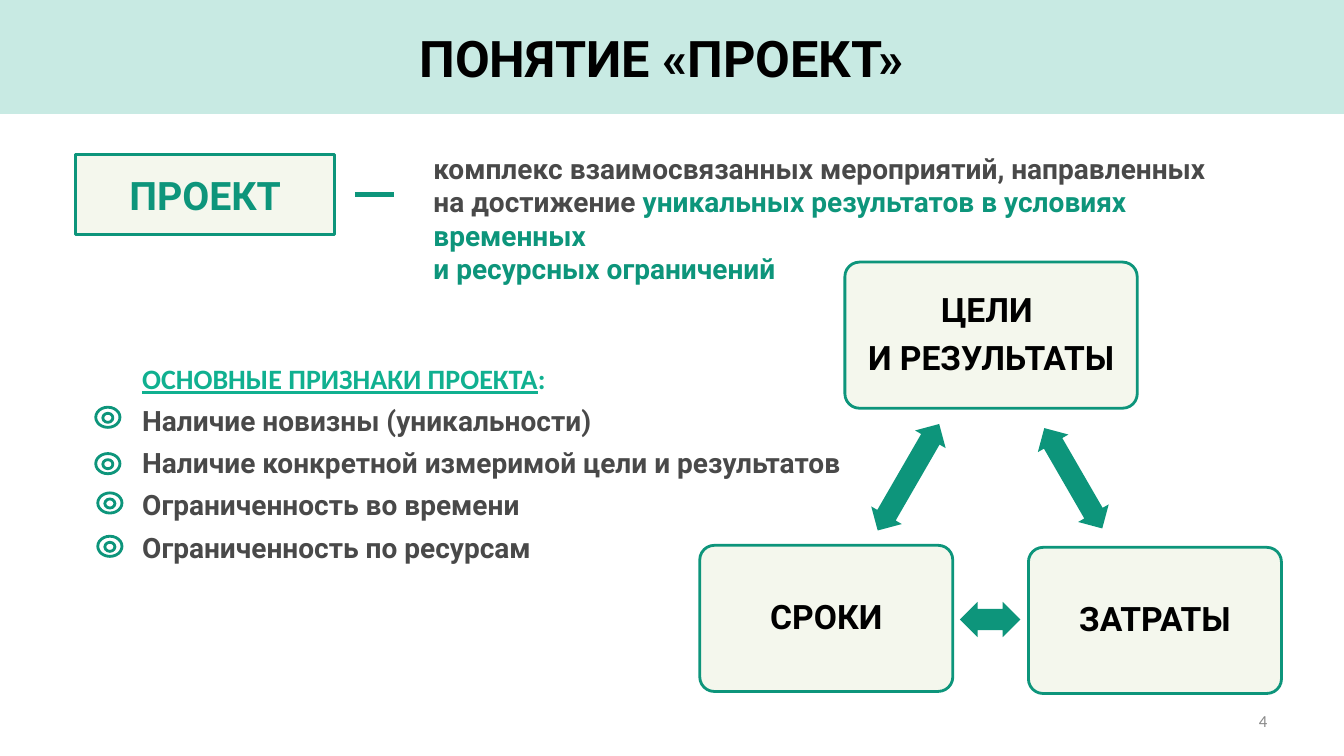
import pptx
import pptx.util
import pptx.dml.color
import pptx.enum.shapes
import pptx.enum.text
import pptx.oxml.ns
import lxml.etree

Inches, Pt = pptx.util.Inches, pptx.util.Pt
SHAPE = pptx.enum.shapes.MSO_SHAPE
ALIGN = pptx.enum.text.PP_ALIGN
ANCHOR = pptx.enum.text.MSO_ANCHOR
qn = pptx.oxml.ns.qn

GREEN, CREAM, GRAY, BLACK = "0D957B", "F4F7ED", "494949", "000000"


def color(code):
    return pptx.dml.color.RGBColor.from_string(code)


def place(shape, box):
    for key, val in zip(("left", "top", "width", "height"), box):
        setattr(shape, key, Inches(val))


def style(font, form):
    """Set font attributes from a dict; 'color' is a hex string."""
    for key, val in form.items():
        if key == "color":
            font.color.rgb = color(val)
        else:
            setattr(font, key, val)


def face(size, code, name="Roboto", bold=True):
    return {"size": Pt(size), "color": code, "name": name, "bold": bold}


def write(para, runs, **layout):
    """Fill a paragraph with (text, format) runs; newlines become breaks."""
    for key, val in layout.items():
        setattr(para, key, val)
    for text, form in runs:
        for num, part in enumerate(text.split("\n")):
            if num:
                para.add_line_break()
            run = para.add_run()
            run.text = part
            style(run.font, form)


def setup(shape, anchor=ANCHOR.TOP):
    frame = shape.text_frame
    frame.word_wrap = True
    frame.auto_size = pptx.enum.text.MSO_AUTO_SIZE.NONE
    frame.vertical_anchor = anchor
    return frame


def label(slide, box, runs, anchor=ANCHOR.TOP, **layout):
    shape = slide.shapes.add_textbox(*map(Inches, box))
    write(setup(shape, anchor).paragraphs[0], runs, **layout)


def draw(slide, kind, box, fill=None, line=None, adjust=(), turn=0):
    shape = slide.shapes.add_shape(kind, *map(Inches, box))
    shape.shadow.inherit = False
    shape.rotation = turn
    for num, val in enumerate(adjust):
        shape.adjustments[num] = val
    if fill:
        shape.fill.solid()
        shape.fill.fore_color.rgb = color(fill)
    else:
        shape.fill.background()
    if line:
        shape.line.color.rgb = color(line)
        shape.line.width = Pt(2)
    else:
        shape.line.fill.background()
    return shape


def band(slide):
    """Pale strip behind the title."""
    shape = draw(slide, SHAPE.RECTANGLE, (0, 0, 13.33, 1.13), "37B29A")
    tint = shape._element.spPr.find(".//" + qn("a:srgbClr"))
    lxml.etree.SubElement(tint, qn("a:alpha")).set("val", "27000")
    slide.shapes._spTree.insert(2, shape._element)


def dash(slide, left, right, top):
    line = slide.shapes.add_connector(
        pptx.enum.shapes.MSO_CONNECTOR.STRAIGHT,
        Inches(left), Inches(top), Inches(right), Inches(top))
    line.line.color.rgb = color(GREEN)
    line.line.width = Pt(3)
    lxml.etree.SubElement(line._element.spPr, qn("a:effectLst"))


def ring(slide, left, top):
    """Bullet made of two rings with a shared centre."""
    draw(slide, SHAPE.OVAL, (left, top, 0.24, 0.2), line=GREEN)
    draw(slide, SHAPE.OVAL, (left + 0.07, top + 0.06, 0.1, 0.09), line=GREEN)


def card(slide, box, lines):
    shape = draw(slide, SHAPE.ROUNDED_RECTANGLE, box, CREAM, GREEN, [0.1])
    frame = setup(shape, ANCHOR.MIDDLE)
    for num, text in enumerate(lines):
        para = frame.add_paragraph() if num else frame.paragraphs[0]
        write(para, [(text, face(24, BLACK))], alignment=ALIGN.CENTER,
              line_spacing=0.9, space_before=Pt(0), space_after=Pt(8.4))


def arrow(slide, box, turn):
    draw(slide, SHAPE.LEFT_RIGHT_ARROW, box, GREEN, adjust=(0.6, 0.5), turn=turn)


def signs(body):
    """Heading and list of project features."""
    place(body, (1.31, 3.54, 7.14, 2.12))
    frame = setup(body)
    head = face(20, "10B090", "Calibri")
    rows = [[("ОСНОВНЫЕ ПРИЗНАКИ ПРОЕКТА", {**head, "underline": True}), (":", head)]]
    rows += [[(text, face(20, GRAY))] for text in (
        "Наличие новизны (уникальности)",
        "Наличие конкретной измеримой цели и результатов",
        "Ограниченность во времени",
        "Ограниченность по ресурсам")]
    for num, runs in enumerate(rows):
        para = frame.add_paragraph() if num else frame.paragraphs[0]
        props = para._p.get_or_add_pPr()
        props.set("marL", "0")
        props.set("indent", "0")
        lxml.etree.SubElement(props, qn("a:buNone"))
        write(para, runs, space_before=Pt(6 if num else 0))


def main():
    deck = pptx.Presentation()
    deck.slide_width, deck.slide_height = Inches(13.33), Inches(7.5)
    slide = deck.slides.add_slide(deck.slide_layouts[1])
    for shape in list(slide.placeholders):
        if shape.placeholder_format.idx > 1:
            shape._element.getparent().remove(shape._element)

    # Title
    band(slide)
    title = slide.shapes.title
    place(title, (-0.1, 0.21, 13.33, 0.71))
    write(setup(title, ANCHOR.MIDDLE).paragraphs[0],
          [("ПОНЯТИЕ «ПРОЕКТ»", face(36, BLACK))], alignment=ALIGN.CENTER)

    # Term and definition
    term = draw(slide, SHAPE.RECTANGLE, (0.75, 1.53, 2.57, 0.8), CREAM, GREEN)
    write(setup(term, ANCHOR.MIDDLE).paragraphs[0],
          [("ПРОЕКТ", face(28, GREEN))], alignment=ALIGN.CENTER)
    dash(slide, 3.52, 3.91, 1.93)
    label(slide, (4.2, 1.45, 8.61, 1.11), [
        ("комплекс взаимосвязанных мероприятий, направленных \nна достижение ",
         face(20, GRAY)),
        ("уникальных результатов в условиях временных \nи ресурсных ограничений",
         face(20, GREEN))])

    # Features
    signs(slide.placeholders[1])
    for left, top in ((0.95, 4.04), (0.95, 4.5), (0.97, 4.89), (0.97, 5.32)):
        ring(slide, left, top)

    # Triangle of limits
    card(slide, (8.38, 2.6, 2.9, 1.45), ["ЦЕЛИ ", "И РЕЗУЛЬТАТЫ"])
    card(slide, (10.2, 5.43, 2.51, 1.45), ["ЗАТРАТЫ"])
    card(slide, (6.94, 5.41, 2.51, 1.45), ["СРОКИ"])
    arrow(slide, (10.07, 4.57, 1.15, 0.35), 60)
    arrow(slide, (9.52, 5.97, 0.6, 0.35), 180)
    arrow(slide, (8.4, 4.56, 1.22, 0.35), 300)

    # Slide number
    label(slide, (9.56, 6.95, 3.11, 0.4),
          [("4", face(12, "898989", "Calibri", False))],
          ANCHOR.MIDDLE, alignment=ALIGN.RIGHT)

    deck.save("out.pptx")


if __name__ == "__main__":
    main()
